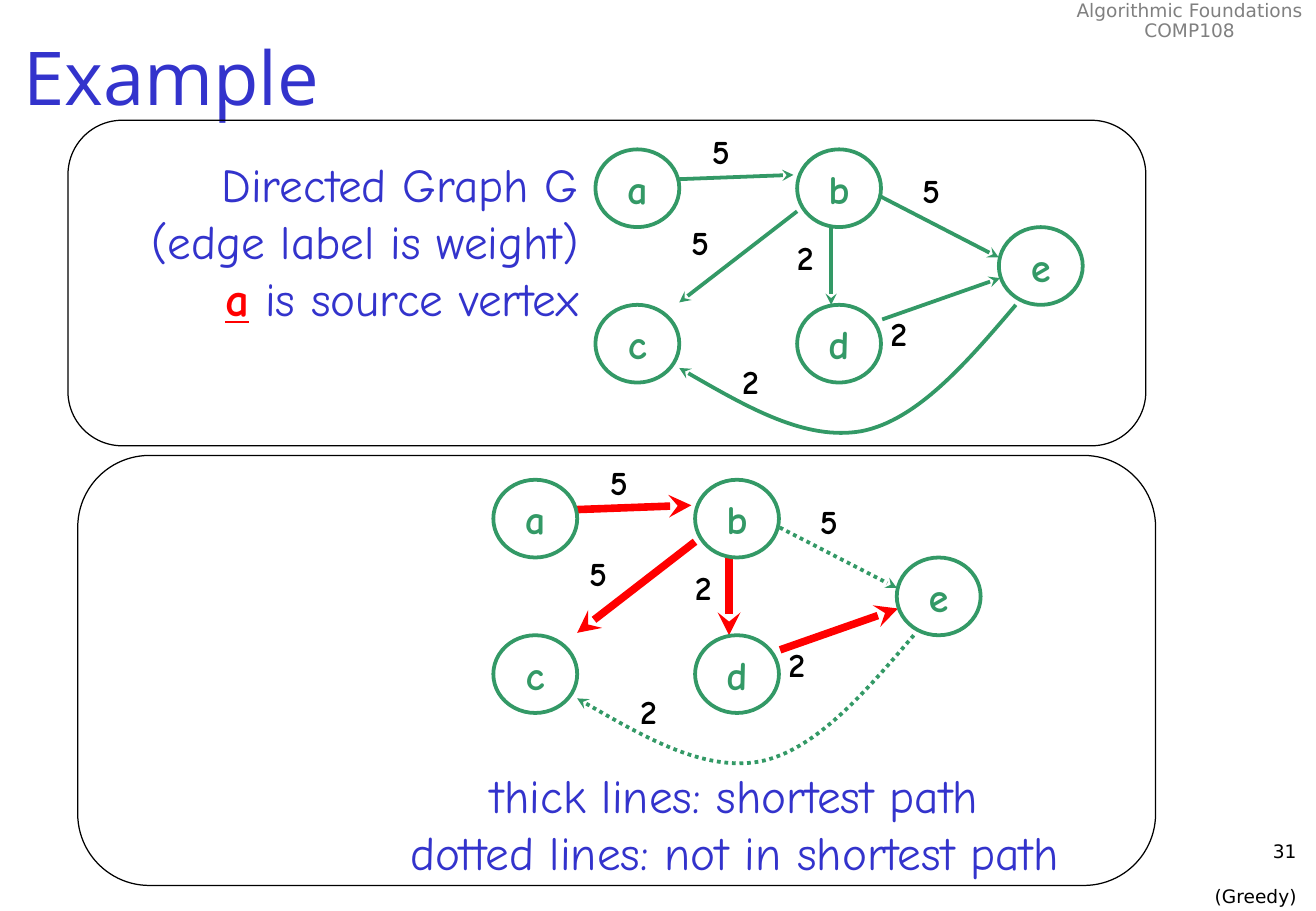
from pptx import Presentation
from pptx import util as u
from pptx.dml.color import RGBColor
from pptx.enum import dml, shapes, text
from pptx.oxml.ns import qn
from lxml import etree

PX = 9144
BLUE = RGBColor(0x33, 0x33, 0xCC)
GREEN = RGBColor(0x33, 0x99, 0x66)
RED = RGBColor(0xFF, 0, 0)
BLACK = RGBColor(0, 0, 0)
GREY = RGBColor(0x80, 0x80, 0x80)
WHITE = RGBColor(0xFF, 0xFF, 0xFF)
HAND, PLAIN, HEADING = "Comic Neue", "DejaVu Sans", "Open Sans"
LEFT, CENTER, RIGHT = text.PP_ALIGN.LEFT, text.PP_ALIGN.CENTER, text.PP_ALIGN.RIGHT

COLUMN, ROW = 166, 64
NODES = {"a": (0, 0), "b": (1, 0), "c": (0, 2), "d": (1, 2), "e": (2, 1)}
TREE_EDGES = [
    ((56, 25), (163, 21)),
    ((166, 51), (69, 126)),
    ((194, 64), (194, 128)),
    ((236, 140), (333, 106)),
]
OTHER_EDGE = ((208, 25), (332, 89))
CURVE = [(346, 128), (306, 175), (265, 223), (219, 232), (173, 240), (121, 210), (69, 180)]
WEIGHTS = [("5", 86, -20), ("5", 259, 12), ("5", 69, 55),
           ("2", 156, 67), ("2", 233, 130), ("2", 111, 169)]


def px(*lengths):
    """Turn px lengths into EMU."""
    return [u.Emu(length * PX) for length in lengths]


def add_run(paragraph, words, font, size, color, bold=False, underline=False):
    """Append one formatted run to a paragraph."""
    run = paragraph.add_run()
    run.text = words
    run.font.name, run.font.size = font, u.Pt(size)
    run.font.color.rgb = color
    run.font.bold, run.font.underline = bold, underline


def add_text(slide, box, lines, font, size, color, align, bold=False, wrap=True):
    """Place a text box; a line is a string or a list of (words, color, emphasis)."""
    frame = slide.shapes.add_textbox(*px(*box)).text_frame
    frame.word_wrap = wrap
    frame.auto_size = text.MSO_AUTO_SIZE.SHAPE_TO_FIT_TEXT
    for index, line in enumerate(lines):
        paragraph = frame.paragraphs[0] if index == 0 else frame.add_paragraph()
        paragraph.alignment = align
        runs = [(line, color, False)] if isinstance(line, str) else line
        for words, run_color, emphasis in runs:
            add_run(paragraph, words, font, size, run_color, bold or emphasis, emphasis)
    return frame


def style_edge(edge, color, width, dotted):
    """Give an edge its colour, width, dash and arrowhead."""
    edge.line.color.rgb = color
    edge.line.width = u.Pt(width)
    if dotted:
        edge.line.dash_style = dml.MSO_LINE.ROUND_DOT
    outline = edge.line._get_or_add_ln()
    etree.SubElement(outline, qn("a:tailEnd"), type="stealth")


def add_straight_edge(slide, origin, edge, *style):
    """Draw a straight arrow between two points relative to the origin."""
    left, top = origin
    (x1, y1), (x2, y2) = edge
    connector = slide.shapes.add_connector(
        shapes.MSO_CONNECTOR.STRAIGHT, *px(left + x1, top + y1, left + x2, top + y2))
    style_edge(connector, *style)
    etree.SubElement(connector._element.spPr, qn("a:effectLst"))


def add_curved_edge(slide, origin, *style):
    """Draw the curved arrow from e to c as two Bezier segments."""
    left, top = origin
    start, *points = [px(left + x, top + y) for x, y in CURVE]
    builder = slide.shapes.build_freeform(*start)
    builder.add_line_segments(points, close=False)
    curve = builder.convert_to_shape()
    curve.shadow.inherit = False
    curve.fill.background()
    segments = list(curve._element.iter(qn("a:lnTo")))
    for first in range(0, len(segments), 3):
        bezier = etree.Element(qn("a:cubicBezTo"))
        segments[first].addprevious(bezier)
        for segment in segments[first:first + 3]:
            bezier.append(segment[0])
            segment.getparent().remove(segment)
    style_edge(curve, *style)


def add_node(slide, name, box):
    """Draw one labelled vertex."""
    node = slide.shapes.add_shape(shapes.MSO_SHAPE.OVAL, *px(*box))
    node.shadow.inherit = False
    node.fill.solid()
    node.fill.fore_color.rgb = WHITE
    node.line.color.rgb = GREEN
    node.line.width = u.Pt(2.25)
    frame = node.text_frame
    frame.word_wrap = False
    frame.vertical_anchor = text.MSO_ANCHOR.MIDDLE
    frame.paragraphs[0].alignment = CENTER
    add_run(frame.paragraphs[0], name, HAND, 24, GREEN, True)


def add_graph(slide, origin, solved):
    """Draw the weighted graph, marking the shortest paths when solved."""
    left, top = origin
    tree_style = (RED, 4.5, False) if solved else (GREEN, 2.25, False)
    other_style = (GREEN, 2.25, solved)
    add_straight_edge(slide, origin, OTHER_EDGE, *other_style)
    add_curved_edge(slide, origin, *other_style)
    for edge in TREE_EDGES:
        add_straight_edge(slide, origin, edge, *tree_style)
    for name, (column, row) in NODES.items():
        add_node(slide, name, (left + column * COLUMN, top + row * ROW, 69, 64))
    for weight, x, y in WEIGHTS:
        add_text(slide, (left + x, top + y, 40, 43), [weight],
                 HAND, 20, BLACK, LEFT, bold=True, wrap=False)


def add_panel(slide, box, graph_offset, solved, caption_box, caption, align):
    """Place a rounded frame with its graph and caption."""
    left, top = box[:2]
    frame = slide.shapes.add_shape(shapes.MSO_SHAPE.ROUNDED_RECTANGLE, *px(*box))
    frame.shadow.inherit = False
    frame.fill.background()
    frame.line.color.rgb = BLACK
    frame.line.width = u.Pt(0.75)
    x, y, width, height = caption_box
    add_graph(slide, (left + graph_offset[0], top + graph_offset[1]), solved)
    add_text(slide, (left + x, top + y, width, height), caption, HAND, 28, BLUE, align)


def add_title(slide, box):
    """Move and format the title placeholder."""
    title = slide.shapes.title
    title.left, title.top, title.width, title.height = px(*box)
    title.text_frame.vertical_anchor = text.MSO_ANCHOR.MIDDLE
    paragraph = title.text_frame.paragraphs[0]
    paragraph.alignment = LEFT
    add_run(paragraph, "Example", HEADING, 44, BLUE)


def add_course_name(slide, box):
    """Place the course name in the top corner."""
    frame = add_text(slide, box, ["Algorithmic Foundations", "COMP108"],
                     PLAIN, 11, GREY, CENTER, wrap=False)
    for paragraph in frame.paragraphs:
        paragraph.line_spacing = 0.9


def add_page_number(slide, box):
    """Place the page number and the topic in the bottom corner."""
    frame = add_text(slide, box, ["31", "(Greedy)"], PLAIN, 11, BLACK, RIGHT)
    frame.auto_size = text.MSO_AUTO_SIZE.NONE
    frame.paragraphs[1].space_before = u.Pt(13)


def main():
    """Build the slide and save it."""
    presentation = Presentation()
    presentation.slide_width, presentation.slide_height = px(1083, 750)
    slide = presentation.slides.add_slide(presentation.slide_layouts[5])
    add_title(slide, (9, 0, 1074, 125))
    add_course_name(slide, (875, -4, 208, 43))
    add_page_number(slide, (851, 687, 226, 50))
    add_panel(slide, (56, 99, 887, 268), (434, 24), False, (-56, 24, 486, 150),
              ["Directed Graph G", "(edge label is weight)",
               [("a", RED, True), (" is source vertex", BLUE, False)]], RIGHT)
    add_panel(slide, (64, 375, 887, 354), (342, 20), True, (197, 251, 687, 103),
              ["thick lines: shortest path", "dotted lines: not in shortest path"], CENTER)
    presentation.save("out.pptx")


if __name__ == "__main__":
    main()
